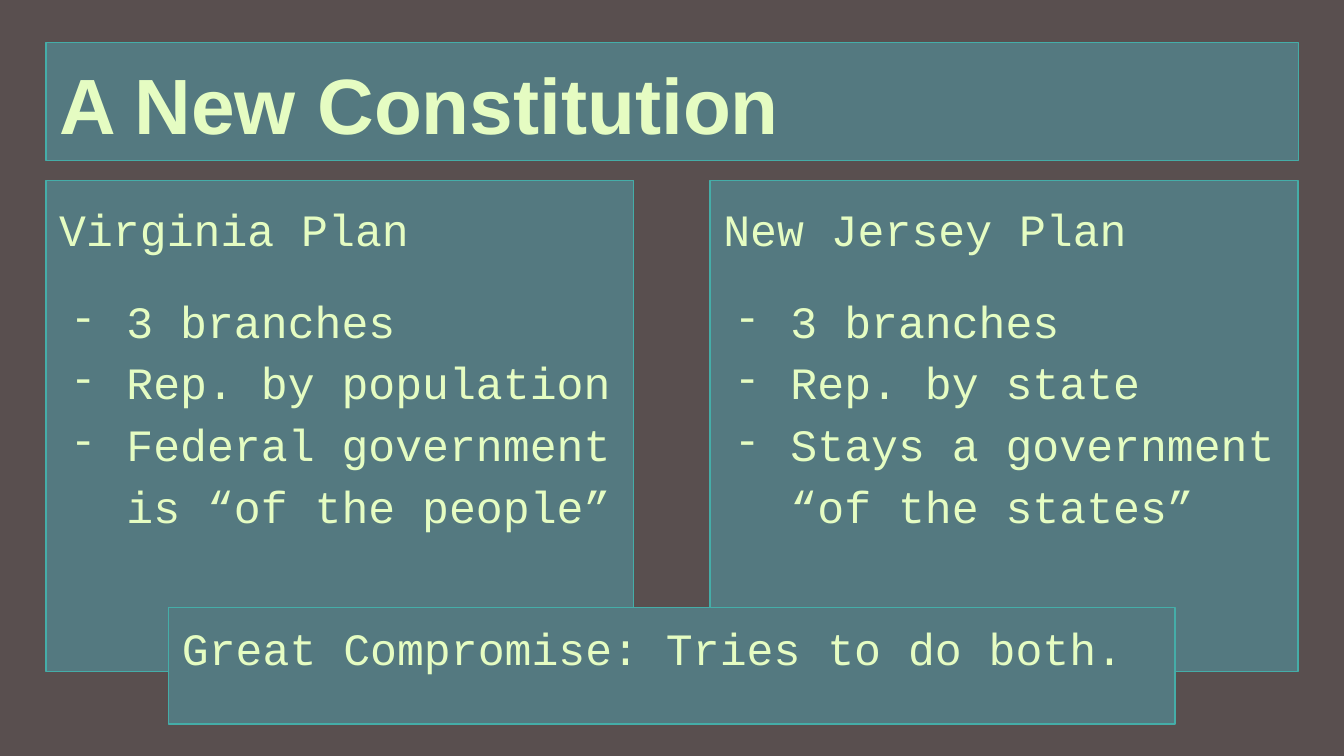
from pptx import Presentation
from pptx.dml.color import RGBColor
from pptx.enum.shapes import MSO_SHAPE
from pptx.enum.text import MSO_ANCHOR, PP_ALIGN
from pptx.util import Cm, Pt
from lxml.etree import SubElement
from pptx.oxml.ns import qn

COLORS = {"background": "594F4F", "panel": "547980", "border": "45ADA8", "text": "E5FCC2"}


def add_panel(left, top, width, height):
    shape = slide.shapes.add_shape(
        MSO_SHAPE.RECTANGLE, Cm(left), Cm(top), Cm(width), Cm(height))
    shape.shadow.inherit = False
    shape.fill.solid()
    shape.fill.fore_color.rgb = RGBColor.from_string(COLORS["panel"])
    shape.line.color.rgb = RGBColor.from_string(COLORS["border"])
    shape.line.width = Pt(0.75)
    frame = shape.text_frame
    frame.word_wrap = True
    frame.vertical_anchor = MSO_ANCHOR.TOP
    frame.margin_left = frame.margin_right = Cm(0.25)
    frame.margin_top = frame.margin_bottom = Cm(0.25)
    return frame


def add_text(paragraph, text, size=24, font="Courier New", bold=False):
    paragraph.alignment = PP_ALIGN.LEFT
    run = paragraph.add_run()
    run.text = text
    run.font.name = font
    run.font.size = Pt(size)
    run.font.bold = bold
    run.font.color.rgb = RGBColor.from_string(COLORS["text"])


presentation = Presentation()
presentation.slide_width = Cm(25.4)
presentation.slide_height = Cm(14.29)
slide = presentation.slides.add_slide(presentation.slide_layouts[6])
slide.background.fill.solid()
slide.background.fill.fore_color.rgb = RGBColor.from_string(COLORS["background"])

# Title
title = add_panel(0.87, 0.81, 23.67, 2.23)
add_text(title.paragraphs[0], "A New Constitution", 42, "Arial", True)

# The two plans side by side
plans = [
    (0.87, "Virginia Plan",
     ["3 branches", "Rep. by population", "Federal government is “of the people”"]),
    (13.42, "New Jersey Plan",
     ["3 branches", "Rep. by state", "Stays a government “of the states”"]),
]
for left, heading, points in plans:
    plan = add_panel(left, 3.41, 11.11, 9.28)
    plan.paragraphs[0].line_spacing = 1.15
    add_text(plan.paragraphs[0], heading)
    for index, point in enumerate(points):
        paragraph = plan.add_paragraph()
        paragraph.line_spacing = 1.15
        paragraph.space_before = Pt(0 if index else 16)
        # Dash bullet with a hanging indent
        properties = paragraph._p.get_or_add_pPr()
        properties.set("marL", str(Cm(1.27)))
        properties.set("indent", str(Cm(-1.07)))
        bullet_color = SubElement(properties, qn("a:buClr"))
        SubElement(bullet_color, qn("a:srgbClr"), val=COLORS["text"])
        SubElement(properties, qn("a:buFont"), typeface="Courier New")
        SubElement(properties, qn("a:buChar"), char="-")
        add_text(paragraph, point)

# Compromise across both plans
compromise = add_panel(3.19, 11.48, 19.02, 2.21)
add_text(compromise.paragraphs[0], "Great Compromise: Tries to do both.")

presentation.save("out.pptx")
